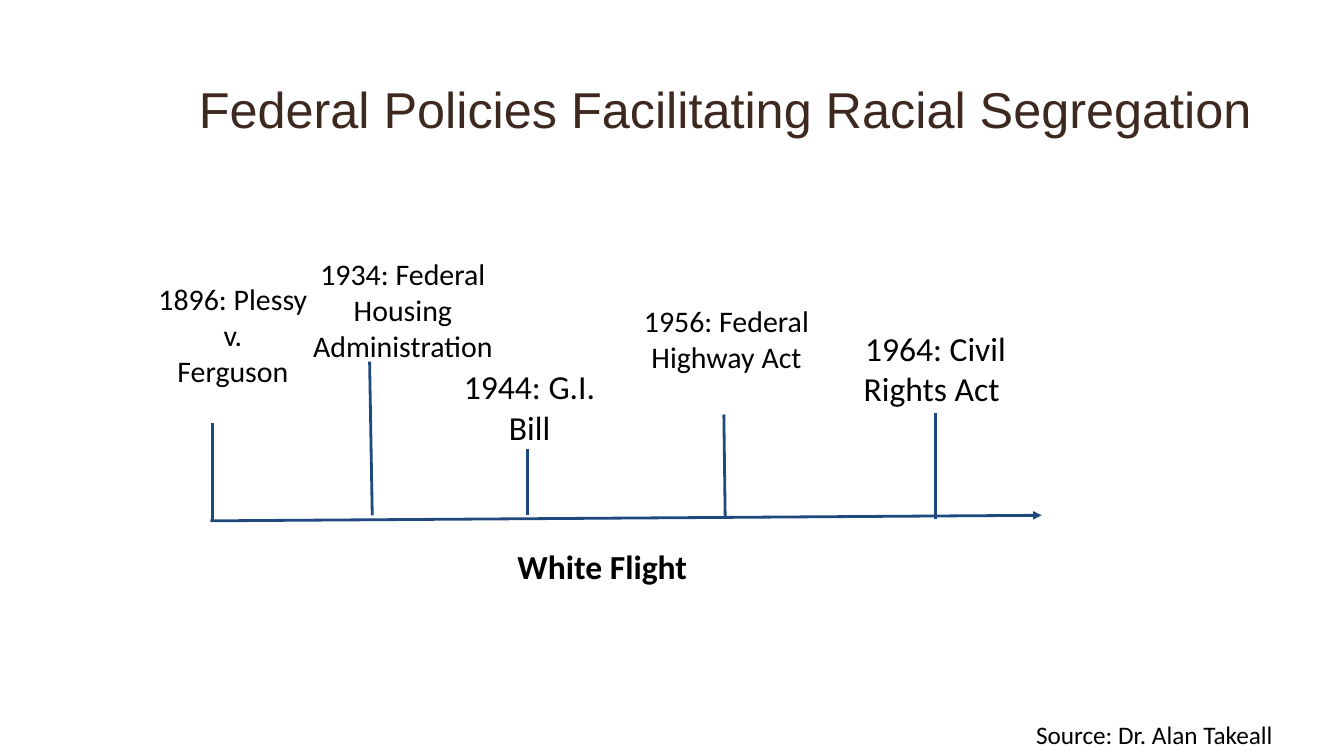
from dataclasses import dataclass, field

from pptx import Presentation
from pptx.dml.color import RGBColor
from pptx.enum.shapes import MSO_CONNECTOR
from pptx.enum.text import PP_ALIGN
from pptx.oxml.ns import qn
from pptx.shapes.connector import Connector
from pptx.slide import Slide
from pptx.util import Cm, Pt
from lxml.etree import SubElement

COLOURS = {"line": "1F497D", "text": "000000", "title": "3D291F"}


@dataclass(frozen=True)
class Line:
    x1: float
    y1: float
    x2: float
    y2: float


@dataclass(frozen=True)
class Label:
    lines: tuple[str, ...]
    left: float
    top: float
    width: float
    height: float
    size: float
    colour: str = "text"
    font: dict = field(default_factory=lambda: {"name": "Calibri", "bold": False})
    paragraph: dict = field(default_factory=lambda: {"alignment": PP_ALIGN.CENTER})
    inset_x: float = 0.51
    inset_y: float = 0.51
    wrap: bool = True


AXIS = Line(7.95, 19.69, 39.37, 19.48)

TICKS = (
    Line(8.03, 15.98, 8.03, 19.69),
    Line(13.97, 13.67, 14.07, 19.48),
    Line(19.94, 16.99, 19.94, 19.48),
    Line(27.36, 15.67, 27.41, 19.56),
    Line(35.36, 15.6, 35.36, 19.63),
)

EVENTS = (
    Label(("1896: Plessy v.", "Ferguson"), 5.31, 10.11, 6.99, 3.56, 32),
    Label(("1934: Federal", "Housing Administration"), 9.78, 9.17, 10.9, 4.75, 32),
    Label(("1944: G.I. Bill",), 16.26, 13.34, 7.52, 1.83, 36),
    Label(("1956: Federal", "Highway Act"), 23.7, 10.95, 7.52, 4.75, 32),
    Label(("1964: Civil", "Rights Act "), 31.6, 11.89, 7.52, 2.87, 36),
)

CAPTION = Label(
    ("White Flight",), 19.05, 20.12, 8.05, 4.75, 36,
    font={"name": "Calibri", "bold": True},
    paragraph={"alignment": PP_ALIGN.LEFT},
)

SOURCE = Label(
    ("Source: Dr. Alan Takeall",), 38.91, 27.08, 9.53, 1.42, 27,
    paragraph={"alignment": PP_ALIGN.LEFT},
    inset_x=0.25, inset_y=0.13, wrap=False,
)

TITLE = Label(
    ("Federal Policies Facilitating Racial Segregation",),
    6.02, 2.34, 42.8, 2.79, 54,
    colour="title",
    font={"name": "Arial", "bold": False},
    paragraph={"alignment": PP_ALIGN.CENTER, "line_spacing": Pt(82.5)},
    inset_x=0, inset_y=0,
)


def set_attributes(target: object, values: dict) -> None:
    for name, value in values.items():
        setattr(target, name, value)


def draw_line(slide: Slide, line: Line) -> Connector:
    connector = slide.shapes.add_connector(
        MSO_CONNECTOR.STRAIGHT, Cm(line.x1), Cm(line.y1), Cm(line.x2), Cm(line.y2)
    )
    connector.line.width = Pt(3)
    connector.line.color.rgb = RGBColor.from_string(COLOURS["line"])
    SubElement(connector._element.spPr, qn("a:effectLst"))
    return connector


def draw_arrow(slide: Slide, line: Line) -> None:
    connector = draw_line(slide, line)
    SubElement(connector.line._get_or_add_ln(), qn("a:tailEnd"), type="triangle")


def draw_label(slide: Slide, label: Label) -> None:
    shape = slide.shapes.add_textbox(
        Cm(label.left), Cm(label.top), Cm(label.width), Cm(label.height)
    )
    frame = shape.text_frame
    set_attributes(frame, {
        "text": "\n".join(label.lines),
        "word_wrap": label.wrap,
        "margin_left": Cm(label.inset_x),
        "margin_right": Cm(label.inset_x),
        "margin_top": Cm(label.inset_y),
        "margin_bottom": Cm(label.inset_y),
    })
    for paragraph in frame.paragraphs:
        set_attributes(paragraph, label.paragraph)
        for run in paragraph.runs:
            set_attributes(run.font, {"size": Pt(label.size), **label.font})
            run.font.color.rgb = RGBColor.from_string(COLOURS[label.colour])


def main() -> None:
    presentation = Presentation()
    set_attributes(presentation, {"slide_width": Cm(50.8), "slide_height": Cm(28.58)})
    slide = presentation.slides.add_slide(presentation.slide_layouts[6])
    for tick in TICKS:
        draw_line(slide, tick)
    draw_arrow(slide, AXIS)
    for label in (*EVENTS, CAPTION, SOURCE, TITLE):
        draw_label(slide, label)
    presentation.save("out.pptx")


if __name__ == "__main__":
    main()
